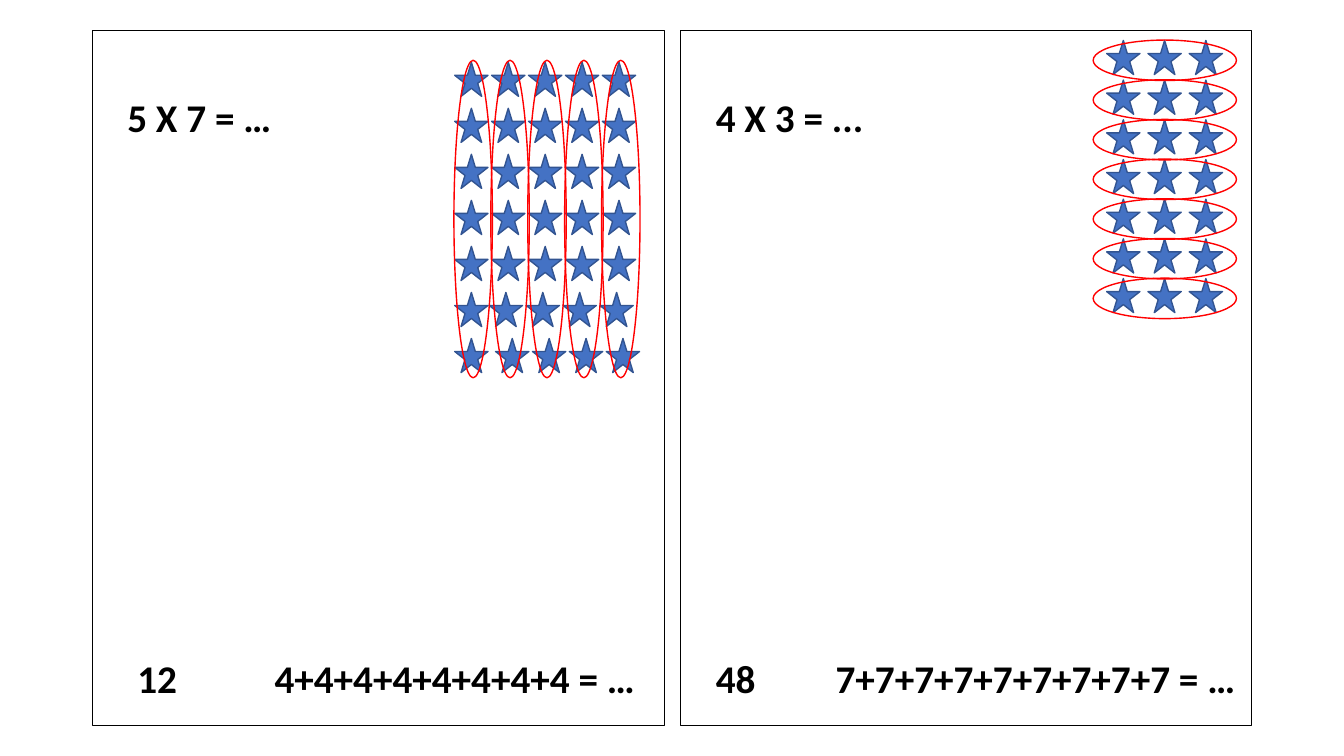
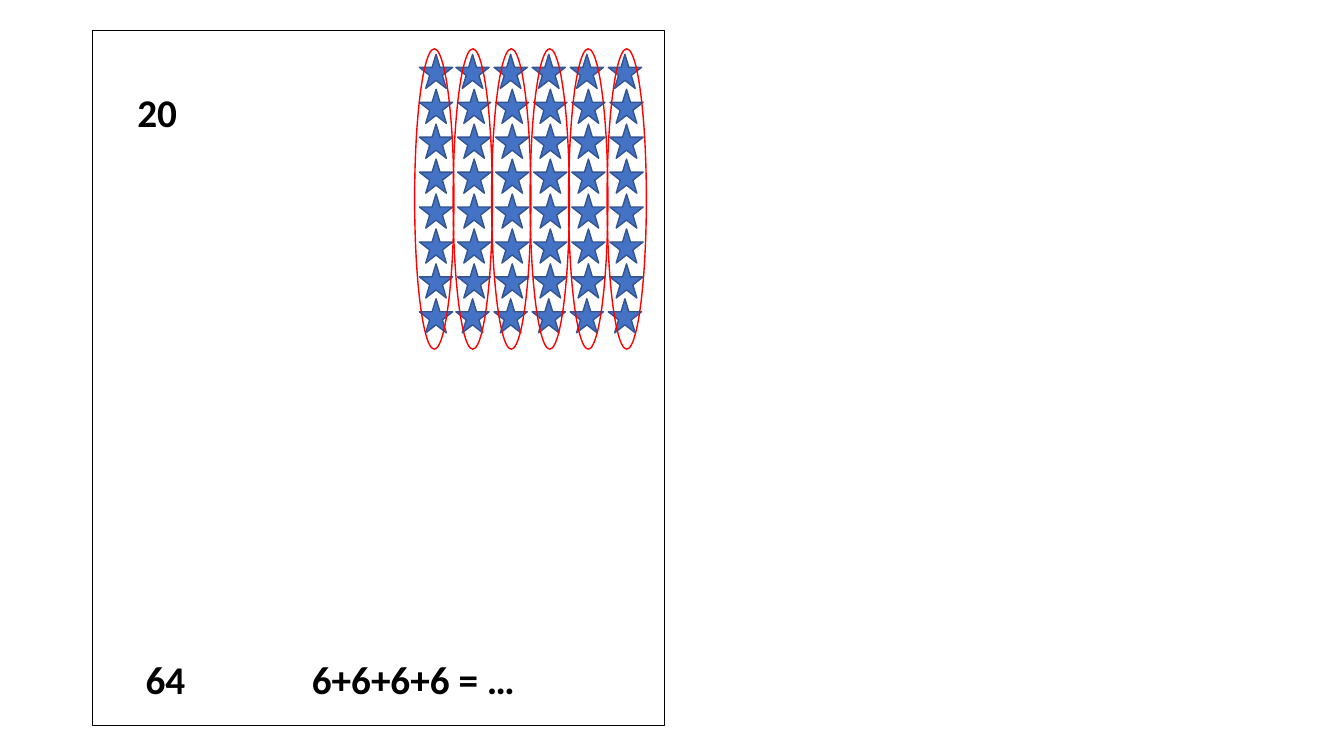
"""Build two slides of multiplication cards with grouped stars."""
from lxml import etree
from pptx import Presentation
from pptx import util as u
from pptx.dml.color import RGBColor
from pptx.enum import shapes, text
from pptx.oxml.ns import qn

COLORS = {"ink": "000000", "star": "4472C4", "star_edge": "325491", "ring": "FF0000"}
FONT = "Calibri"
CARD_TOP, CARD_WIDTH, CARD_HEIGHT = 0.76, 14.4, 17.53
STAR_WIDTH, STAR_HEIGHT = 0.84, 0.86

SLIDES = [
    [
        {
            "left": 2.34, "inset": 1.72, "gap": 370.5,
            "heading": "5 X 7 = …", "indent": 0.62,
            "footer": "\t12\t4+4+4+4+4+4+4+4 = …", "tabs": (0.87, 4.33),
            "stars": {"left": 11.46, "top": 1.57, "columns": 5, "rows": 7, "dx": 0.93, "dy": 1.16},
            "row_shifts": {5: -0.06, 6: 0.1},
            "rings": {"left": 11.44, "top": 1.52, "columns": 5, "rows": 1, "dx": 0.93, "dy": 0},
            "ring_size": (0.97, 8),
        },
        {
            "left": 17.15, "inset": 1.72, "gap": 370.5,
            "heading": "4 X 3 = ...", "indent": 0.64,
            "footer": "\t48\t7+7+7+7+7+7+7+7+7 = …", "tabs": (0.64, 3.66),
            "stars": {"left": 27.89, "top": 1.02, "columns": 3, "rows": 7, "dx": 1.04, "dy": 1},
            "row_shifts": {},
            "rings": {"left": 27.55, "top": 1.01, "columns": 1, "rows": 7, "dx": 0, "dy": 1},
            "ring_size": (3.61, 1.02),
        },
    ],
    [
        {
            "left": 2.34, "inset": 1.6, "gap": 374.5,
            "heading": "20", "indent": 0.87,
            "footer": "\t64\t6+6+6+6 = …", "tabs": (1.08, 5.27),
            "stars": {"left": 10.57, "top": 1.37, "columns": 6, "rows": 8, "dx": 0.96, "dy": 0.88},
            "row_shifts": {0: -0.04, 7: -0.04},
            "rings": {"left": 10.45, "top": 1.23, "columns": 6, "rows": 1, "dx": 0.97, "dy": 0},
            "ring_size": (0.99, 7.57),
        },
    ],
]


def add_outline(slide, kind, left, top, width, height, line, weight, fill=None):
    """Add a shadowless preset shape, measured in centimetres."""
    shape = slide.shapes.add_shape(kind, u.Cm(left), u.Cm(top), u.Cm(width), u.Cm(height))
    shape.shadow.inherit = False
    if fill:
        shape.fill.solid()
        shape.fill.fore_color.rgb = RGBColor.from_string(COLORS[fill])
    else:
        shape.fill.background()
    shape.line.color.rgb = RGBColor.from_string(COLORS[line])
    shape.line.width = u.Pt(weight)
    return shape


def grid_points(left, top, columns, rows, dx, dy):
    """Yield row, column, left and top for every cell."""
    for row in range(rows):
        for column in range(columns):
            yield row, column, left + column * dx, top + row * dy


presentation = Presentation()
presentation.slide_width = u.Cm(33.87)
presentation.slide_height = u.Cm(19.05)

for cards in SLIDES:
    slide = presentation.slides.add_slide(presentation.slide_layouts[6])
    for card in cards:
        frame = add_outline(slide, shapes.MSO_SHAPE.RECTANGLE, card["left"], CARD_TOP,
                            CARD_WIDTH, CARD_HEIGHT, "ink", 0.75).text_frame
        frame.word_wrap = True
        frame.vertical_anchor = text.MSO_ANCHOR.TOP
        frame.margin_top = u.Cm(card["inset"])
        heading, footer = frame.paragraphs[0], frame.add_paragraph()
        heading._p.get_or_add_pPr().set("marL", str(u.Cm(card["indent"])))
        footer.space_before = u.Pt(card["gap"])
        tab_list = etree.SubElement(footer._p.get_or_add_pPr(), qn("a:tabLst"))
        for position in card["tabs"]:
            etree.SubElement(tab_list, qn("a:tab"), pos=str(u.Cm(position)), algn="l")
        for paragraph, words in ((heading, card["heading"]), (footer, card["footer"])):
            paragraph.alignment = text.PP_ALIGN.LEFT
            paragraph.line_spacing = 0.9
            run = paragraph.add_run()
            run.text = words
            run.font.name = FONT
            run.font.size = u.Pt(28)
            run.font.bold = True
            run.font.color.rgb = RGBColor.from_string(COLORS["ink"])

        for row, column, left, top in grid_points(**card["stars"]):
            shift = card["row_shifts"].get(row, 0) if column else 0
            add_outline(slide, shapes.MSO_SHAPE.STAR_5_POINT, left + shift, top,
                        STAR_WIDTH, STAR_HEIGHT, "star_edge", 1, "star")
        for row, column, left, top in grid_points(**card["rings"]):
            add_outline(slide, shapes.MSO_SHAPE.OVAL, left, top, *card["ring_size"], "ring", 1)

presentation.save("out.pptx")
